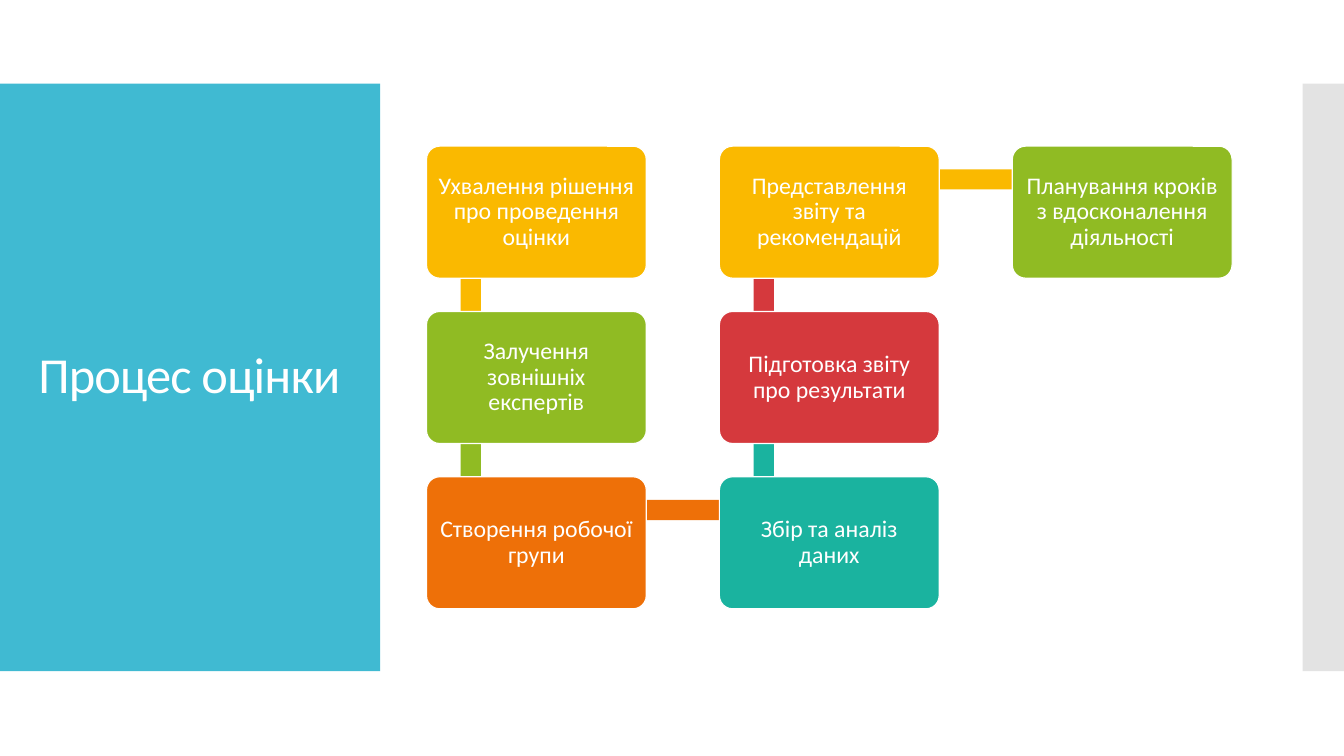
from lxml.etree import SubElement
from pptx import Presentation
from pptx.dml.color import RGBColor
from pptx.enum.shapes import MSO_SHAPE
from pptx.enum.text import MSO_ANCHOR, MSO_AUTO_SIZE, PP_ALIGN
from pptx.oxml.ns import qn
from pptx.util import Inches, Pt

TITLE = "Процес оцінки"
# text, colour, column, row
STEPS = [
    ("Ухвалення рішення про проведення оцінки", "FAB900", 0, 0),
    ("Залучення зовнішніх експертів", "90BB23", 0, 1),
    ("Створення робочої групи", "EE7008", 0, 2),
    ("Збір та аналіз даних", "1AB39F", 1, 2),
    ("Підготовка звіту про результати", "D5393D", 1, 1),
    ("Представлення звіту та рекомендацій", "FAB900", 1, 0),
    ("Планування кроків з вдосконалення діяльності", "90BB23", 2, 0),
]
LEFT, TOP = 4.23, 1.45
COLUMN_STEP, ROW_STEP = 2.905, 1.64
BOX_WIDTH, BOX_HEIGHT = 2.18, 1.31
BAR = 0.2
BAR_X, BAR_Y = 0.44, 0.33  # where bars meet, measured from a box corner


def paint(fill, color):
    fill.solid()
    fill.fore_color.rgb = RGBColor.from_string(color)


def add_block(page, kind, left, top, width, height, color):
    block = page.shapes.add_shape(
        kind, Inches(left), Inches(top), Inches(width), Inches(height))
    block.shadow.inherit = False
    paint(block.fill, color)
    block.line.fill.background()
    return block


def write(shape, text, size, align, inset_x, inset_y):
    frame = shape.text_frame
    frame.word_wrap = True
    frame.auto_size = MSO_AUTO_SIZE.NONE
    frame.vertical_anchor = MSO_ANCHOR.MIDDLE
    frame.margin_left = frame.margin_right = Inches(inset_x)
    frame.margin_top = frame.margin_bottom = Inches(inset_y)
    para = frame.paragraphs[0]
    para.alignment = align
    para.line_spacing = 0.9
    span = para.add_run()
    span.text = text
    span.font.size = Pt(size)
    span.font.name = "Calibri"
    paint(span.font.fill, "FFFFFF")
    return span


def corner(column, row):
    return LEFT + column * COLUMN_STEP, TOP + row * ROW_STEP


def add_bar(page, start, end, color):
    """Join two neighbouring steps, given by their box corners."""
    (x1, y1), (x2, y2) = start, end
    width, height = abs(x2 - x1) or BAR, abs(y2 - y1) or BAR
    add_block(page, MSO_SHAPE.RECTANGLE,
              (x1 + x2 - width) / 2 + BAR_X, (y1 + y2 - height) / 2 + BAR_Y,
              width, height, color)


def add_step(page, text, color, column, row):
    box = add_block(page, MSO_SHAPE.ROUNDED_RECTANGLE, *corner(column, row),
                    BOX_WIDTH, BOX_HEIGHT, color)
    box.adjustments[0] = 0.1
    paint(box.line.fill, "FFFFFF")
    box.line.width = Pt(0.85)
    write(box, text, 17, PP_ALIGN.CENTER, 0.07, 0.07)


def main():
    deck = Presentation()
    deck.slide_width, deck.slide_height = Inches(13.33), Inches(7.5)
    page = deck.slides.add_slide(deck.slide_layouts[5])

    title = page.shapes.title
    title.left, title.top = Inches(0.28), Inches(1.23)
    title.width, title.height = Inches(3.22), Inches(5.03)
    span = write(title, TITLE, 36, PP_ALIGN.LEFT, 0.1, 0.05)
    span.font._element.set("spc", "-60")

    panel = add_block(page, MSO_SHAPE.RECTANGLE, 0, 0.83, 3.77, 5.83, "40BAD2")
    strip = add_block(page, MSO_SHAPE.RECTANGLE, 12.92, 0.83, 0.41, 5.83, "C8C8C8")
    strip_color = strip.element.spPr.find(qn("a:solidFill"))[0]
    SubElement(strip_color, qn("a:alpha"), val="50000")
    for backdrop in (panel, strip):
        title.element.addprevious(backdrop.element)

    for (_, color, *start), (_, _, *end) in zip(STEPS, STEPS[1:]):
        add_bar(page, corner(*start), corner(*end), color)
    for step in STEPS:
        add_step(page, *step)

    deck.save("out.pptx")


if __name__ == "__main__":
    main()
